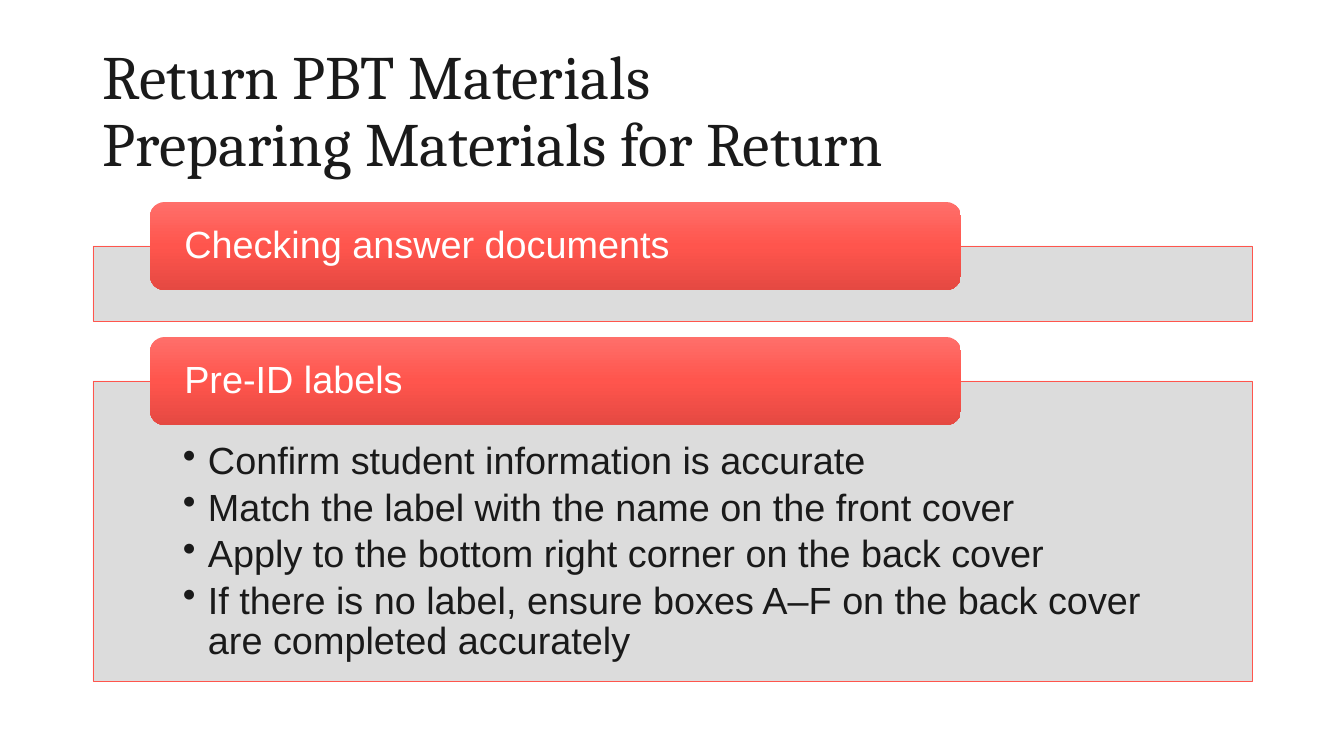
from copy import deepcopy

from lxml.etree import SubElement
from pptx import Presentation
from pptx.dml.color import RGBColor
from pptx.enum.shapes import MSO_SHAPE
from pptx.enum.text import MSO_ANCHOR, MSO_AUTO_SIZE, PP_ALIGN
from pptx.oxml.ns import qn
from pptx.util import Emu, Pt

PX = 914400 / 100.8
COLORS = {
    "ink": "1A1A1A",
    "white": "FFFFFF",
    "panel": "D9D9D9",
    "red": "FF554D",
    "red_light": "FF6F6A",
    "red_dark": "E54942",
}
TAB_GRADIENT = [(0, "red_light"), (0.5, "red"), (1, "red_dark")]

MARGIN, CONTENT_WIDTH = 93, 1159
TAB_LEFT, TAB_WIDTH, TAB_HEIGHT = 150, 811, 88
PANEL_OFFSET = TAB_HEIGHT // 2

SECTIONS = [
    ("Checking answer documents", 202, 75, []),
    ("Pre-ID labels", 337, 300, [
        "Confirm student information is accurate",
        "Match the label with the name on the front cover",
        "Apply to the bottom right corner on the back cover",
        "If there is no label, ensure boxes A–F on the back cover "
        "are completed accurately",
    ]),
]


def px(length):
    return Emu(round(length * PX))


def rgb(name):
    return RGBColor.from_string(COLORS[name])


class SlideBuilder:
    heading_font, body_font = "Cambria", "Arial"
    heading_size, body_size = Pt(44), Pt(27)

    def __init__(self, presentation):
        self.slide = presentation.slides.add_slide(presentation.slide_layouts[5])

    def style(self, paragraph, font, size, color):
        paragraph.alignment = PP_ALIGN.LEFT
        paragraph.line_spacing = 0.9
        paragraph.font.name = font
        paragraph.font.size = size
        paragraph.font.color.rgb = rgb(color)

    def frame(self, shape, anchor, left=0, top=0, right=0, bottom=0):
        """Set wrapping, anchor and insets, and return the text frame."""
        frame = shape.text_frame
        frame.word_wrap = True
        frame.auto_size = MSO_AUTO_SIZE.NONE
        frame.vertical_anchor = anchor
        frame.margin_left, frame.margin_right = px(left), px(right)
        frame.margin_top, frame.margin_bottom = px(top), px(bottom)
        return frame

    def shape(self, preset, left, top, width, height):
        shape = self.slide.shapes.add_shape(
            preset, px(left), px(top), px(width), px(height))
        shape.shadow.inherit = False
        return shape

    def title(self, text, left, top, width, height):
        title = self.slide.shapes.title
        title.left, title.top = px(left), px(top)
        title.width, title.height = px(width), px(height)
        heading = self.frame(title, MSO_ANCHOR.MIDDLE, 10, 5, 10, 5).paragraphs[0]
        heading.text = text
        self.style(heading, self.heading_font, self.heading_size, "ink")

    def panel(self, bullets, top, height):
        panel = self.shape(MSO_SHAPE.RECTANGLE, MARGIN, top, CONTENT_WIDTH, height)
        panel.fill.solid()
        panel.fill.fore_color.rgb = rgb("panel")
        fill_color = panel._element.spPr.find(qn("a:solidFill"))[0]
        SubElement(fill_color, qn("a:alpha"), val="90000")
        panel.line.color.rgb = rgb("red")
        panel.line.width = Pt(0.5)

        frame = self.frame(panel, MSO_ANCHOR.TOP, 90, 61, 90, 21)
        for index, bullet in enumerate(bullets):
            paragraph = frame.add_paragraph() if index else frame.paragraphs[0]
            paragraph.text = bullet
            properties = paragraph._p.get_or_add_pPr()
            properties.set("marL", str(px(25)))
            properties.set("indent", str(px(-25)))
            SubElement(properties, qn("a:buChar"), char="•")
            paragraph.space_after = Pt(4)
            self.style(paragraph, self.body_font, self.body_size, "ink")

    def tab(self, label, top):
        tab = self.shape(
            MSO_SHAPE.ROUNDED_RECTANGLE, TAB_LEFT, top, TAB_WIDTH, TAB_HEIGHT)
        tab.line.fill.background()
        tab.fill.gradient()
        tab.fill.gradient_angle = 270
        stop_list = tab._element.spPr.find(qn("a:gradFill")).find(qn("a:gsLst"))
        stop_list.append(deepcopy(stop_list[0]))
        for stop, (position, color) in zip(tab.fill.gradient_stops, TAB_GRADIENT):
            stop.position = position
            stop.color.rgb = rgb(color)

        heading = self.frame(tab, MSO_ANCHOR.MIDDLE, 30, 0, 30, 0).paragraphs[0]
        heading.text = label
        self.style(heading, self.body_font, self.body_size, "white")


def main():
    presentation = Presentation()
    presentation.slide_width, presentation.slide_height = px(1344), px(756)
    builder = SlideBuilder(presentation)
    builder.title("Return PBT Materials\vPreparing Materials for Return",
                  MARGIN, 40, CONTENT_WIDTH, 146)
    for label, top, panel_height, bullets in SECTIONS:
        builder.panel(bullets, top + PANEL_OFFSET, panel_height)
        builder.tab(label, top)
    presentation.save("out.pptx")


if __name__ == "__main__":
    main()
